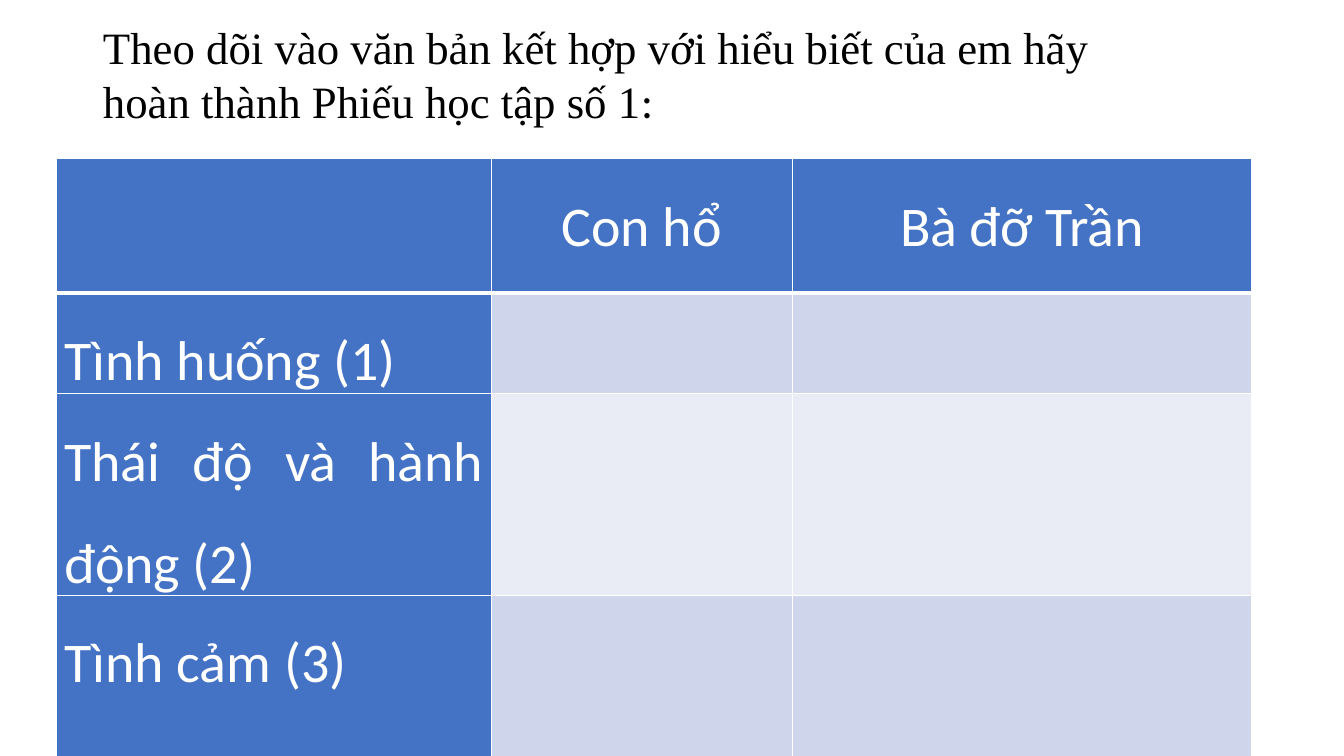
"""Build the worksheet slide: a task title above a table to fill in."""
from lxml.etree import SubElement
from pptx import Presentation
from pptx.dml.color import RGBColor
from pptx.enum.text import MSO_ANCHOR as Anchor, MSO_AUTO_SIZE as AutoSize, PP_ALIGN as Align
from pptx.oxml.ns import qn
from pptx.util import Cm, Pt

TITLE = [
    ("Theo dõi vào văn bản kết hợp với hiểu biết của em hãy hoàn thành Phiếu học tập số 1", "Times New Roman"),
    (":", "Calibri"),
]
ROWS = [
    ("", "Con hổ", "Bà đỡ Trần"),
    ("Tình huống (1)", "", ""),
    ("Thái độ và hành động (2)", "", ""),
    ("Tình cảm (3)", "", ""),
]
COLUMN_WIDTHS = [10.95, 7.59, 11.58]
ROW_HEIGHTS = [3.38, 2.31, 4.42, 4.42]
COLORS = {"header": "4472C4", "odd": "CFD5EA", "even": "E9EBF5", "white": "FFFFFF", "black": "000000"}


def color(name):
    return RGBColor.from_string(COLORS[name])


def add_span(para, text, font, size, color_name):
    span = para.add_run()
    span.text = text
    span.font.name = font
    span.font.size = Pt(size)
    span.font.bold = False
    span.font.color.rgb = color(color_name)


def set_borders(cell, bottom_width):
    properties = cell._tc.get_or_add_tcPr()
    widths = {"a:lnL": 1, "a:lnR": 1, "a:lnT": 1, "a:lnB": bottom_width}
    for position, (side, width) in enumerate(widths.items()):
        line = SubElement(properties, qn(side), w=str(Pt(width)))
        fill = SubElement(line, qn("a:solidFill"))
        SubElement(fill, qn("a:srgbClr"), val=COLORS["white"])
        properties.insert(position, line)


def add_title(slide):
    box = slide.shapes.title
    box.left, box.top, box.width, box.height = Cm(2.34), Cm(0.36), Cm(26.42), Cm(3)
    frame = box.text_frame
    frame.word_wrap = True
    frame.auto_size = AutoSize.SHAPE_TO_FIT_TEXT
    frame.vertical_anchor = Anchor.MIDDLE
    para = frame.paragraphs[0]
    para.alignment = Align.LEFT
    for text, font in TITLE:
        add_span(para, text, font, 32, "black")


def add_worksheet(slide):
    table = slide.shapes.add_table(
        len(ROWS), len(COLUMN_WIDTHS), Cm(1.43), Cm(4),
        Cm(sum(COLUMN_WIDTHS)), Cm(sum(ROW_HEIGHTS))).table
    table.first_col = True
    for column, width in zip(table.columns, COLUMN_WIDTHS):
        column.width = Cm(width)
    for row, height in zip(table.rows, ROW_HEIGHTS):
        row.height = Cm(height)
    for r, texts in enumerate(ROWS):
        for c, text in enumerate(texts):
            cell = table.cell(r, c)
            is_header = r == 0 or c == 0
            cell.fill.solid()
            cell.fill.fore_color.rgb = color("header" if is_header else "odd" if r % 2 else "even")
            set_borders(cell, 3 if r == 0 else 1)
            if text:
                cell.margin_left = cell.margin_right = Cm(0.19)
                cell.margin_top = cell.margin_bottom = 0
                para = cell.text_frame.paragraphs[0]
                para.alignment = Align.CENTER if r == 0 else Align.JUSTIFY
                para.line_spacing = 1.5
                add_span(para, text, "Calibri", 40, "white")


def main():
    deck = Presentation()
    deck.slide_width, deck.slide_height = Cm(33.87), Cm(19.05)
    page = deck.slides.add_slide(deck.slide_layouts[5])
    add_title(page)
    add_worksheet(page)
    deck.save("out.pptx")


if __name__ == "__main__":
    main()
